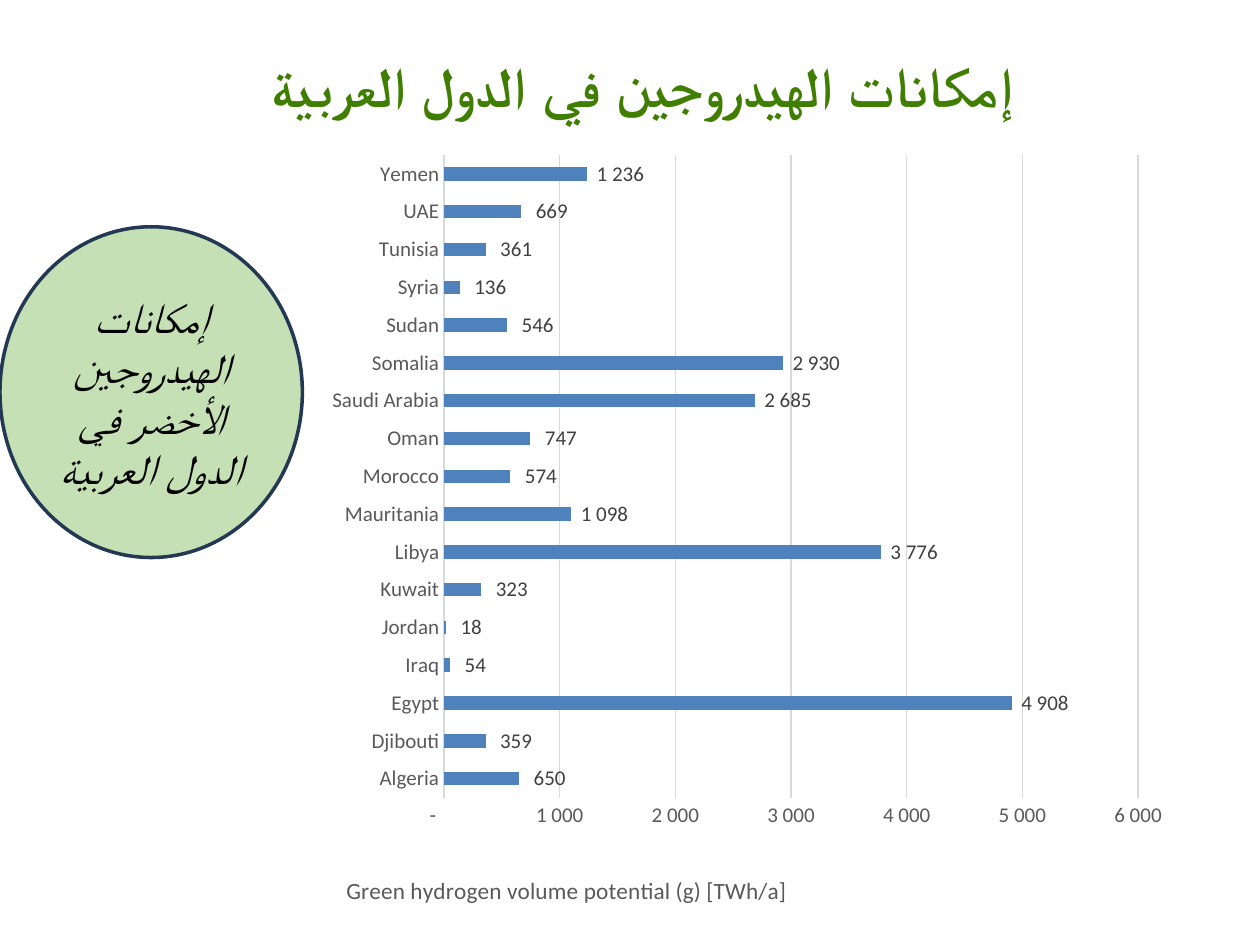
from dataclasses import dataclass

from lxml.etree import SubElement
from pptx import Presentation
from pptx.chart.data import CategoryChartData
from pptx.dml.color import RGBColor
from pptx.enum.chart import XL_CHART_TYPE as ChartType, XL_LABEL_POSITION as LabelPosition
from pptx.enum.chart import XL_TICK_MARK as TickMark
from pptx.enum.shapes import MSO_SHAPE as Shape
from pptx.enum.text import MSO_ANCHOR as Anchor, PP_ALIGN as Align
from pptx.oxml.ns import qn
from pptx.util import Inches, Pt


@dataclass(frozen=True)
class Theme:
    """Colours, font and type sizes of the deck."""
    font: str = "Calibri"
    title: str = "3F7E00"
    ink: str = "000000"
    label: str = "404040"
    axis: str = "595959"
    grid: str = "D9D9D9"
    bar: str = "4F81BD"
    badge: str = "C5E0B4"
    outline: str = "233953"
    title_size: int = 32
    badge_size: int = 24
    axis_title_size: float = 13.3
    label_size: int = 12
    chart_size: int = 10


NUMBER_FORMAT = r'_-* #\ ##0_-;\-* #\ ##0_-;_-* "-"??_-;_-'
POTENTIAL = {
    "Algeria": 650, "Djibouti": 359, "Egypt": 4908, "Iraq": 54, "Jordan": 18,
    "Kuwait": 323, "Libya": 3776, "Mauritania": 1098, "Morocco": 574,
    "Oman": 747, "Saudi Arabia": 2685, "Somalia": 2930, "Sudan": 546,
    "Syria": 136, "Tunisia": 361, "UAE": 669, "Yemen": 1236,
}


class SlideBuilder:
    """Places styled elements on one slide by shares of its size."""

    def __init__(self, deck, theme):
        """Add a title-only slide to the deck."""
        self.deck, self.theme = deck, theme
        self.slide = deck.slides.add_slide(deck.slide_layouts[5])

    def area(self, left, top, width, height):
        """Turn shares of the slide into lengths."""
        wide, high = self.deck.slide_width, self.deck.slide_height
        return int(left * wide), int(top * high), int(width * wide), int(height * high)

    def style(self, font, size, color):
        """Set the family, size and colour of a font."""
        font.name, font.size = self.theme.font, Pt(size)
        font.color.rgb = RGBColor.from_string(color)

    def arabic(self, frame, text, size, color):
        """Fill a frame with a centred right-to-left paragraph."""
        frame.word_wrap = True
        frame.vertical_anchor = Anchor.MIDDLE
        para = frame.paragraphs[0]
        para.text, para.alignment = text, Align.CENTER
        para._p.get_or_add_pPr().set("rtl", "1")
        self.style(para.font, size, color)
        return para

    def title(self, text, *shares):
        """Move and fill the title placeholder."""
        box = self.slide.shapes.title
        box.left, box.top, box.width, box.height = self.area(*shares)
        para = self.arabic(box.text_frame, text, self.theme.title_size, self.theme.title)
        para.font.bold = True

    def badge(self, text, *shares):
        """Add an outlined ellipse with italic text."""
        theme = self.theme
        oval = self.slide.shapes.add_shape(Shape.OVAL, *self.area(*shares))
        oval.shadow.inherit = False
        oval.fill.solid()
        oval.fill.fore_color.rgb = RGBColor.from_string(theme.badge)
        oval.line.color.rgb = RGBColor.from_string(theme.outline)
        oval.line.width = Pt(2)
        para = self.arabic(oval.text_frame, text, theme.badge_size, theme.ink)
        para.font.italic = True

    def layout(self, owner, **settings):
        """Give a chart part a manual layout."""
        for old in owner.findall(qn("c:layout")):
            owner.remove(old)
        holder = SubElement(owner, qn("c:layout"))
        manual = SubElement(holder, qn("c:manualLayout"))
        for name, value in settings.items():
            SubElement(manual, qn(f"c:{name}")).set("val", str(value))
        return holder

    def hairline(self, line):
        """Draw a thin grey chart line."""
        line.color.rgb = RGBColor.from_string(self.theme.grid)
        line.width = Pt(0.75)

    def bar_chart(self, values, axis_title, *shares):
        """Add a labelled horizontal bar chart."""
        theme = self.theme
        data = CategoryChartData()
        data.categories = list(values)
        data.add_series("Series 1", list(values.values()))
        chart = self.slide.shapes.add_chart(
            ChartType.BAR_CLUSTERED, *self.area(*shares), data).chart
        chart.has_legend = chart.has_title = False
        self.style(chart.font, theme.chart_size, theme.ink)

        for axis in (chart.category_axis, chart.value_axis):
            axis.major_tick_mark = axis.minor_tick_mark = TickMark.NONE
            self.style(axis.tick_labels.font, theme.label_size, theme.axis)
        self.hairline(chart.category_axis.format.line)
        scale = chart.value_axis
        scale.format.line.fill.background()
        self.hairline(scale.major_gridlines.format.line)
        scale.tick_labels.number_format = NUMBER_FORMAT
        scale.tick_labels.number_format_is_linked = False
        para = scale.axis_title.text_frame.paragraphs[0]
        para.text = axis_title
        self.style(para.font, theme.axis_title_size, theme.axis)
        para.font.bold = False

        plot = chart.plots[0]
        plot.gap_width, plot.vary_by_categories = 182, False
        fill = plot.series[0].format.fill
        fill.solid()
        fill.fore_color.rgb = RGBColor.from_string(theme.bar)
        plot.has_data_labels = True
        labels = plot.data_labels
        labels.show_value, labels.position = True, LabelPosition.OUTSIDE_END
        labels.number_format, labels.number_format_is_linked = NUMBER_FORMAT, False
        self.style(labels.font, theme.label_size, theme.label)

        plot_area = chart._chartSpace.chart.plotArea
        plot_area.insert(0, self.layout(
            plot_area, layoutTarget="inner", xMode="edge", yMode="edge",
            x=0.25, y=0.04, w=0.68, h=0.8))
        heading = scale.axis_title._element
        heading.find(qn("c:tx")).addnext(
            self.layout(heading, xMode="edge", yMode="edge", x=0.15, y=0.93))


def main():
    """Build and save the slide."""
    deck = Presentation()
    deck.slide_width, deck.slide_height = Inches(10), Inches(7.5)
    page = SlideBuilder(deck, Theme())
    page.title("إمكانات الهيدروجين في الدول العربية", 0.06, 0.05, 0.9, 0.08)
    page.bar_chart(POTENTIAL, "Green hydrogen volume potential (g) [TWh/a]",
                   0.15, 0.13, 0.81, 0.85)
    page.badge("إمكانات الهيدروجين الأخضر في الدول العربية", 0, 0.24, 0.24, 0.35)
    deck.save("out.pptx")


if __name__ == "__main__":
    main()
